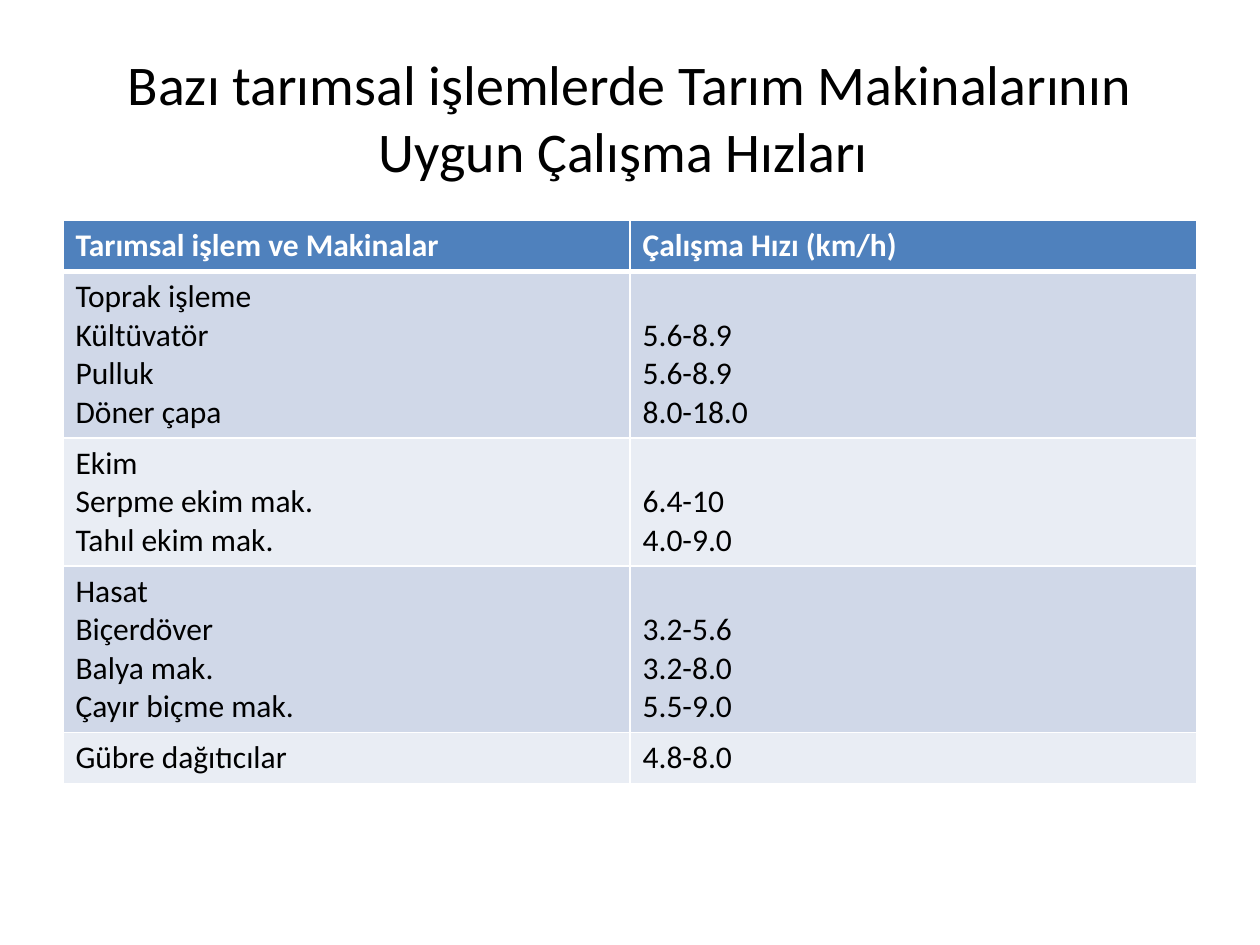
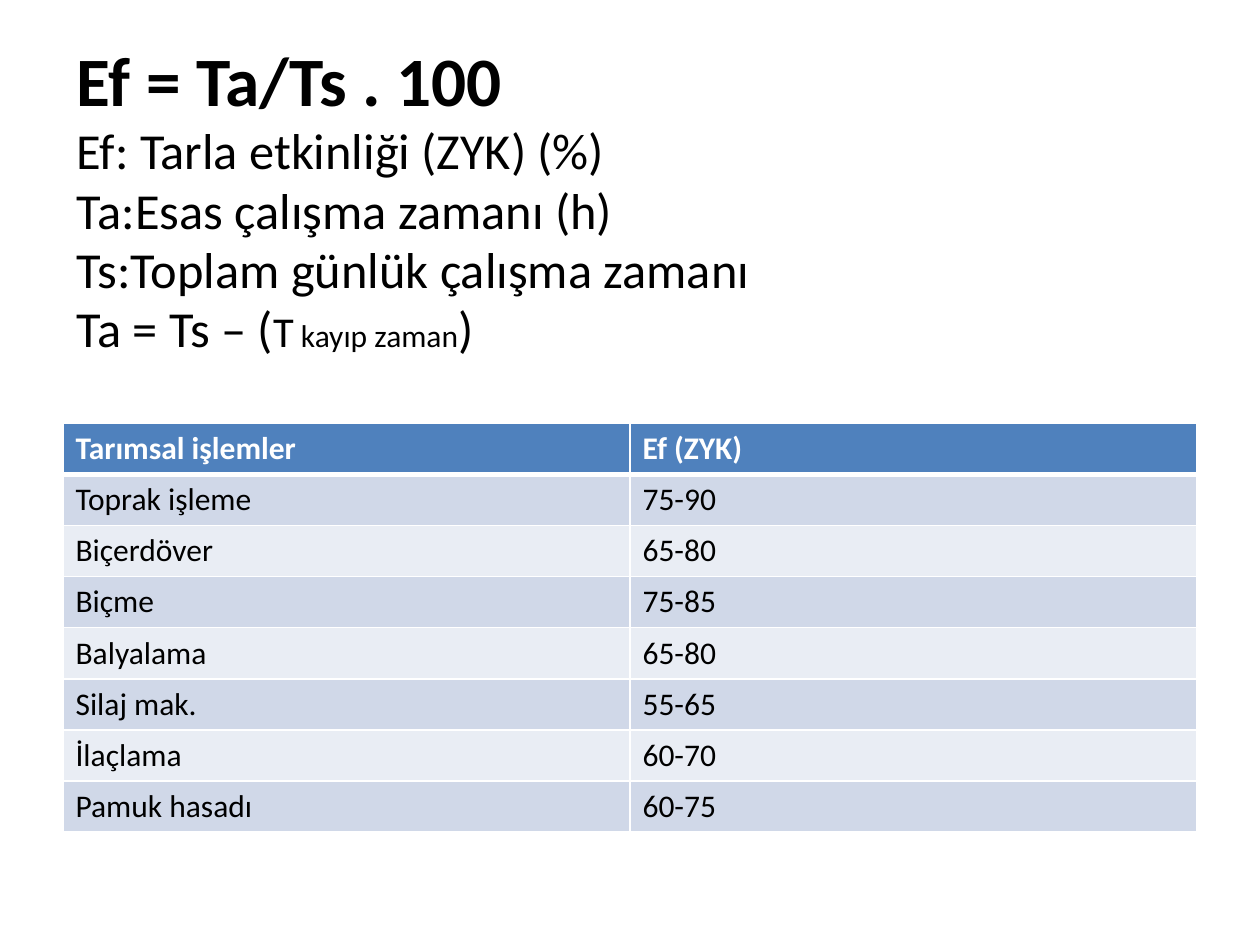
"""Two slides on working speeds and field efficiency of farm machinery."""
from dataclasses import dataclass

from lxml import etree
from pptx import Presentation
from pptx.dml.color import RGBColor
from pptx.enum.text import MSO_ANCHOR, MSO_AUTO_SIZE, PP_ALIGN
from pptx.oxml.ns import qn
from pptx.util import Inches, Pt

LEFT, CENTER = PP_ALIGN.LEFT, PP_ALIGN.CENTER
MIDDLE, BOTTOM = MSO_ANCHOR.MIDDLE, MSO_ANCHOR.BOTTOM
NO_AUTOFIT = MSO_AUTO_SIZE.NONE

FONT = "Calibri"
BLACK, WHITE = "000000", "FFFFFF"
HEADER, BANDS = "4F81BD", ("D0D8E8", "E9EDF4")
MARGIN, WIDTH = 0.5, 9
LINE_HEIGHT, CELL_PADDING = 0.3, 0.1
TITLE_LAYOUT = 5


@dataclass
class Line:
    """A title line made of (text, size) runs."""
    runs: list[tuple[str, float]]
    bold: bool = False


@dataclass
class TitleBox:
    left: float
    top: float
    height: float
    lines: list[Line]
    align: PP_ALIGN = CENTER
    spacing: float = 1.0
    bottom_inset: float = 0.05


@dataclass
class Grid:
    top: float
    rows: list[tuple[str, str]]


SLIDES = [
    (
        TitleBox(MARGIN, 0.3, 1.25, [
            Line([("Bazı tarımsal işlemlerde Tarım Makinalarının Uygun Çalışma Hızları ", 32)]),
        ]),
        Grid(1.75, [
            ("Tarımsal işlem ve Makinalar", "Çalışma Hızı (km/h)"),
            ("Toprak işleme\nKültüvatör\nPulluk\nDöner çapa", "5.6-8.9\n5.6-8.9\n8.0-18.0"),
            ("Ekim\nSerpme ekim mak.\nTahıl ekim mak.", "6.4-10\n4.0-9.0"),
            ("Hasat\nBiçerdöver\nBalya mak.\nÇayır biçme mak.", "3.2-5.6\n3.2-8.0\n5.5-9.0"),
            ("Gübre dağıtıcılar", "4.8-8.0"),
        ]),
    ),
    (
        TitleBox(0.51, 0.44, 2.9, [
            Line([("Ef = Ta/Ts . 100", 39.6)], bold=True),
            Line([("Ef: Tarla etkinliği (ZYK) (%)", 28.8)]),
            Line([("Ta:Esas çalışma zamanı (h)", 28.8)]),
            Line([("Ts:Toplam günlük çalışma zamanı", 28.8)]),
            Line([("Ta = Ts – (", 28.8), ("T", 24.3), (" kayıp zaman", 18), (")", 28.8)]),
        ], align=LEFT, spacing=0.98, bottom_inset=0.65),
        Grid(3.36, [
            ("Tarımsal işlemler", "Ef (ZYK)"),
            ("Toprak işleme", "75-90"),
            ("Biçerdöver", "65-80"),
            ("Biçme", "75-85"),
            ("Balyalama", "65-80"),
            ("Silaj mak.", "55-65"),
            ("İlaçlama", "60-70"),
            ("Pamuk hasadı", "60-75"),
        ]),
    ),
]


def rgb(color: str) -> RGBColor:
    """Turn a hex string into a colour."""
    return RGBColor.from_string(color)


def style_font(p, color: str, bold: bool) -> None:
    """Apply the shared typeface to a paragraph."""
    p.font.name = FONT
    p.font.bold = bold
    p.font.color.rgb = rgb(color)


def draw_title(s, box: TitleBox) -> None:
    """Place and fill the title placeholder."""
    sp = s.shapes.title
    sp.left, sp.top = Inches(box.left), Inches(box.top)
    sp.width, sp.height = Inches(WIDTH), Inches(box.height)
    tf = sp.text_frame
    tf.word_wrap = True
    tf.auto_size = NO_AUTOFIT
    tf.vertical_anchor = MIDDLE
    tf.margin_bottom = Inches(box.bottom_inset)
    for i, line in enumerate(box.lines):
        p = tf.add_paragraph() if i else tf.paragraphs[0]
        p.alignment = box.align
        p.line_spacing = box.spacing
        style_font(p, BLACK, line.bold)
        if len(line.runs) == 1:
            p.font.size = Pt(line.runs[0][1])
        for text, size in line.runs:
            r = p.add_run()
            r.text = text
            if len(line.runs) > 1:
                r.font.size = Pt(size)


def add_border(cell, side: str, points: float) -> None:
    """Draw one white edge of a cell."""
    tc_pr = cell._tc.get_or_add_tcPr()
    ln = etree.SubElement(tc_pr, qn(f"a:ln{side}"), w=str(Pt(points)))
    fill = etree.SubElement(ln, qn("a:solidFill"))
    etree.SubElement(fill, qn("a:srgbClr"), val=WHITE)


def draw_cell(cell, text: str, row: int) -> None:
    """Fill and format a cell according to its row."""
    is_header = row == 0
    for side in "LRTB":
        below_header = (side == "B" and row == 0) or (side == "T" and row == 1)
        add_border(cell, side, 3 if below_header else 1)
    cell.fill.solid()
    cell.fill.fore_color.rgb = rgb(HEADER if is_header else BANDS[(row - 1) % 2])
    cell.vertical_anchor = BOTTOM
    cell.text_frame.text = text
    for p in cell.text_frame.paragraphs:
        style_font(p, WHITE if is_header else BLACK, is_header)
        p.font.size = Pt(18)


def draw_table(s, grid: Grid) -> None:
    """Add a two-column table whose rows fit their line counts."""
    heights = [LINE_HEIGHT * (first.count("\n") + 1) + CELL_PADDING for first, _ in grid.rows]
    table = s.shapes.add_table(
        len(grid.rows), 2, Inches(MARGIN), Inches(grid.top), Inches(WIDTH), Inches(sum(heights))
    ).table
    for i, (texts, height) in enumerate(zip(grid.rows, heights)):
        table.rows[i].height = Inches(height)
        for j, text in enumerate(texts):
            draw_cell(table.cell(i, j), text, i)


def main() -> None:
    """Build and save the presentation."""
    prs = Presentation()
    prs.slide_width, prs.slide_height = Inches(10), Inches(7.5)
    for box, grid in SLIDES:
        s = prs.slides.add_slide(prs.slide_layouts[TITLE_LAYOUT])
        draw_title(s, box)
        draw_table(s, grid)
    prs.save("out.pptx")


if __name__ == "__main__":
    main()
